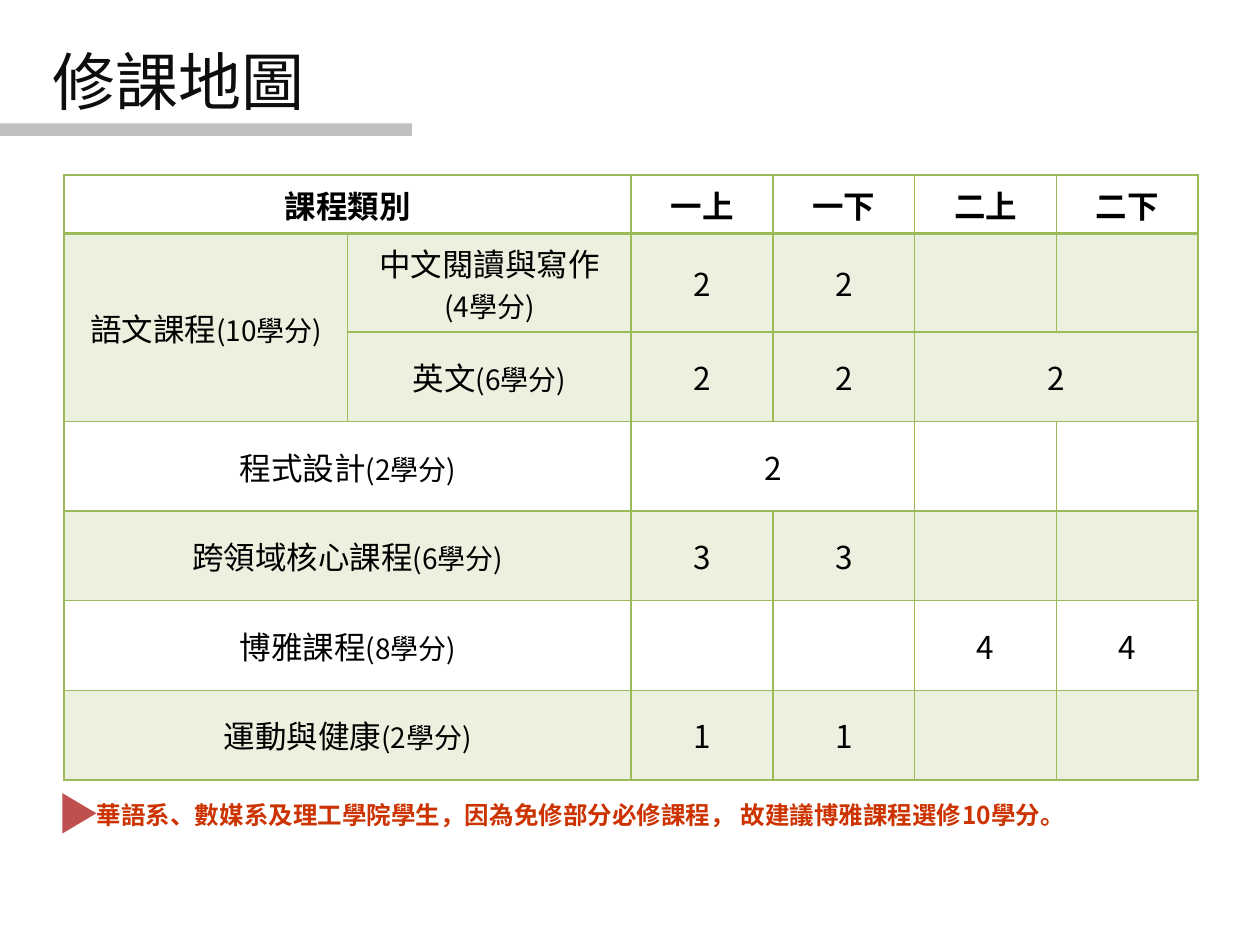
from lxml import etree
from pptx import Presentation
from pptx.dml.color import RGBColor
from pptx.enum.shapes import MSO_SHAPE
from pptx.enum.text import MSO_ANCHOR, PP_ALIGN
from pptx.oxml.ns import qn
from pptx.util import Pt

CENTER, LEFT = PP_ALIGN.CENTER, PP_ALIGN.LEFT
MIDDLE = MSO_ANCHOR.MIDDLE
RECTANGLE, TRIANGLE = MSO_SHAPE.RECTANGLE, MSO_SHAPE.ISOSCELES_TRIANGLE

THEME = {
    "title_font": "Noto Sans CJK JP", "body_font": "Noto Sans CJK SC",
    "title_size": 36, "cell_size": 18, "credit_size": 16, "note_size": 14,
    "title": "0D0D0D", "text": "000000", "note": "CC3300", "bar": "BFBFBF",
    "marker": "C0504D", "border": "9BBB59", "band": "EBF1DE",
}

TITLE = "修課地圖"
NOTE = "華語系、數媒系及理工學院學生，因為免修部分必修課程， 故建議博雅課程選修10學分。"
HEADERS = [(0, "課程類別"), (2, "一上"), (3, "一下"), (4, "二上"), (5, "二下")]
COURSES = [
    (1, 0, [["語文課程", "(10學分)"]]),
    (1, 1, [["中文閱讀與寫作"], ["(4學分)"]]),
    (2, 1, [["英文", "(6學分)"]]),
    (3, 0, [["程式設計", "(2學分)"]]),
    (4, 0, [["跨領域核心課程", "(6學分)"]]),
    (5, 0, [["博雅課程", "(8學分)"]]),
    (6, 0, [["運動與健康", "(2學分)"]]),
]
CREDITS = [
    (1, 2, "2"), (1, 3, "2"),
    (2, 2, "2"), (2, 3, "2"), (2, 4, "2"),
    (3, 2, "2"),
    (4, 2, "3"), (4, 3, "3"),
    (5, 4, "4"), (5, 5, "4"),
    (6, 2, "1"), (6, 3, "1"),
]
MERGES = [(0, 0, 0, 1), (1, 0, 2, 0), (2, 4, 2, 5), (3, 0, 3, 1),
          (3, 2, 3, 3), (4, 0, 4, 1), (5, 0, 5, 1), (6, 0, 6, 1)]
BANDED_ROWS = {1, 2, 4, 6}
COLUMN_WIDTHS = [162] * 2 + [81] * 4
ROW_HEIGHTS = [29.2] + [51.2] * 6


def color(name):
    return RGBColor.from_string(THEME[name])


def write_paragraph(paragraph, pieces, size, ink, font_name, bold=False, align=CENTER):
    paragraph.alignment = align
    font = paragraph.font
    font.size, font.bold, font.name = Pt(size), bold, font_name
    font.color.rgb = color(ink)
    for piece in pieces:
        run = paragraph.add_run()
        run.text = piece
        if piece.startswith("("):
            run.font.size = Pt(THEME["credit_size"])
    for properties in paragraph._p.iter(qn("a:defRPr")):
        etree.SubElement(properties, qn("a:ea"), typeface=font_name)


def write_cell(cell, lines, bold=False):
    frame = cell.text_frame
    for index, pieces in enumerate(lines):
        paragraph = frame.add_paragraph() if index else frame.paragraphs[0]
        write_paragraph(paragraph, pieces, THEME["cell_size"], "text",
                        THEME["body_font"], bold)


def set_borders(cell, widths):
    properties = cell._tc.get_or_add_tcPr()
    for index, (side, width) in enumerate(widths.items()):
        line = etree.Element(qn("a:ln" + side), w=str(Pt(width)))
        fill = etree.SubElement(line, qn("a:solidFill"))
        etree.SubElement(fill, qn("a:srgbClr"), val=THEME["border"])
        properties.insert(index, line)


def add_course_table(slide):
    table = slide.shapes.add_table(
        len(ROW_HEIGHTS), len(COLUMN_WIDTHS), Pt(36.72), Pt(100.08),
        Pt(sum(COLUMN_WIDTHS)), Pt(sum(ROW_HEIGHTS))).table
    table.first_row = table.horz_banding = False
    for column, width in zip(table.columns, COLUMN_WIDTHS):
        column.width = Pt(width)
    for index, (row, height) in enumerate(zip(table.rows, ROW_HEIGHTS)):
        row.height = Pt(height)
        for cell in row.cells:
            cell.vertical_anchor = MIDDLE
            if index in BANDED_ROWS:
                cell.fill.solid()
                cell.fill.fore_color.rgb = color("band")
            else:
                cell.fill.background()
            set_borders(cell, {"L": 1, "R": 1, "T": 2 if index == 1 else 1,
                               "B": 2 if index == 0 else 1})
    for top, left, bottom, right in MERGES:
        table.cell(top, left).merge(table.cell(bottom, right))
    for column, label in HEADERS:
        write_cell(table.cell(0, column), [[label]], bold=True)
    for row, column, lines in COURSES:
        write_cell(table.cell(row, column), lines)
    for row, column, credit in CREDITS:
        write_cell(table.cell(row, column), [[credit]])


def add_text(slide, box, text, size, ink, font_name, bold=False):
    frame = slide.shapes.add_textbox(*map(Pt, box)).text_frame
    frame.word_wrap = True
    write_paragraph(frame.paragraphs[0], [text], size, ink, font_name, bold, LEFT)


def add_block(slide, kind, box, ink, rotation=0):
    shape = slide.shapes.add_shape(kind, *map(Pt, box))
    shape.shadow.inherit = False
    shape.fill.solid()
    shape.fill.fore_color.rgb = color(ink)
    shape.line.fill.background()
    shape.rotation = rotation


def main():
    presentation = Presentation()
    presentation.slide_width, presentation.slide_height = Pt(720), Pt(540)
    slide = presentation.slides.add_slide(presentation.slide_layouts[6])
    add_course_table(slide)
    add_text(slide, (23.04, 20.88, 161.28, 51.12), TITLE,
             THEME["title_size"], "title", THEME["title_font"])
    add_block(slide, RECTANGLE, (-144.72, 70.56, 380.16, 7.2), "bar")
    add_text(slide, (48.24, 453.6, 612, 24.48), NOTE,
             THEME["note_size"], "note", THEME["body_font"], bold=True)
    add_block(slide, TRIANGLE, (33.84, 455.04, 23.04, 19.44), "marker", rotation=90)
    presentation.save("out.pptx")


if __name__ == "__main__":
    main()
